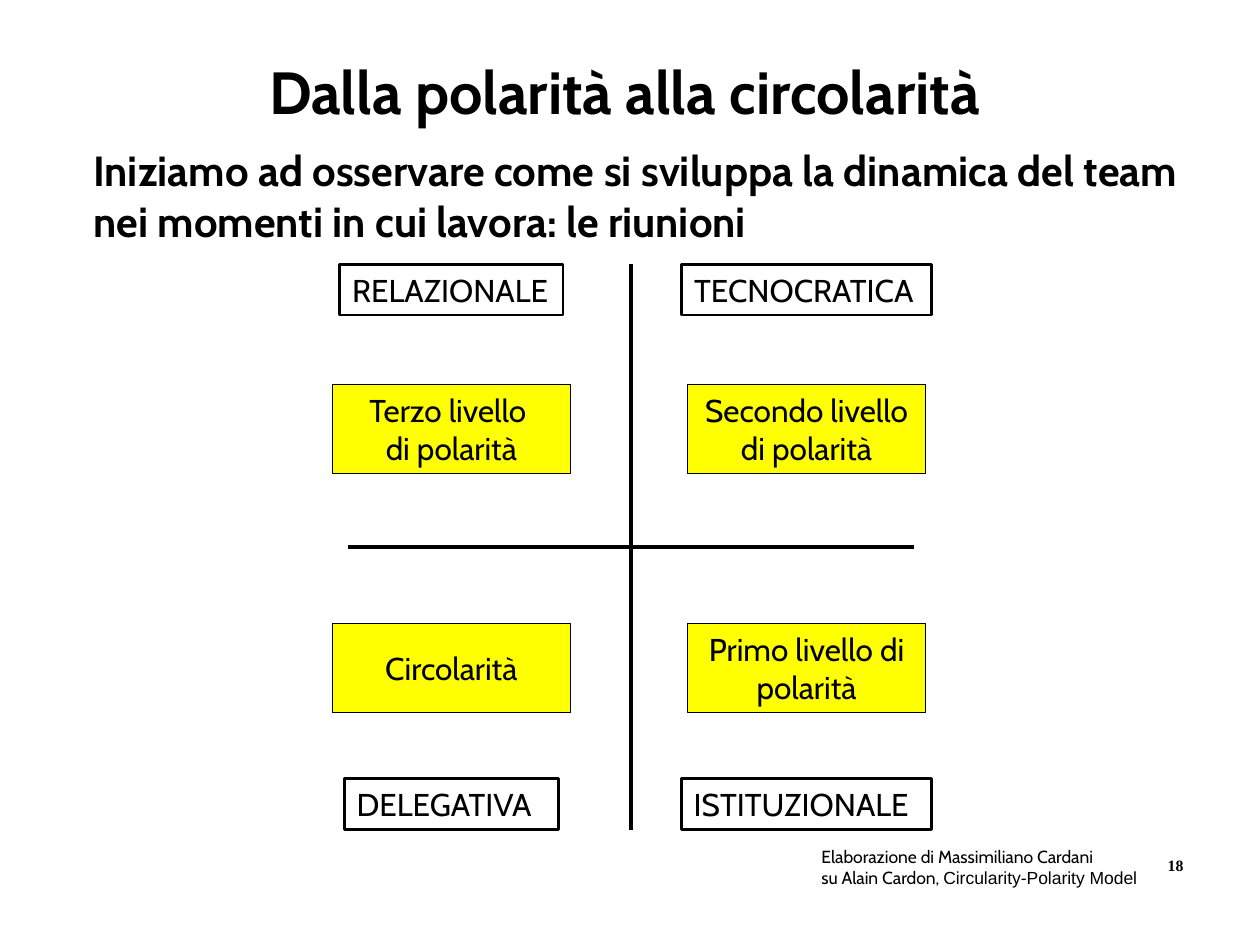
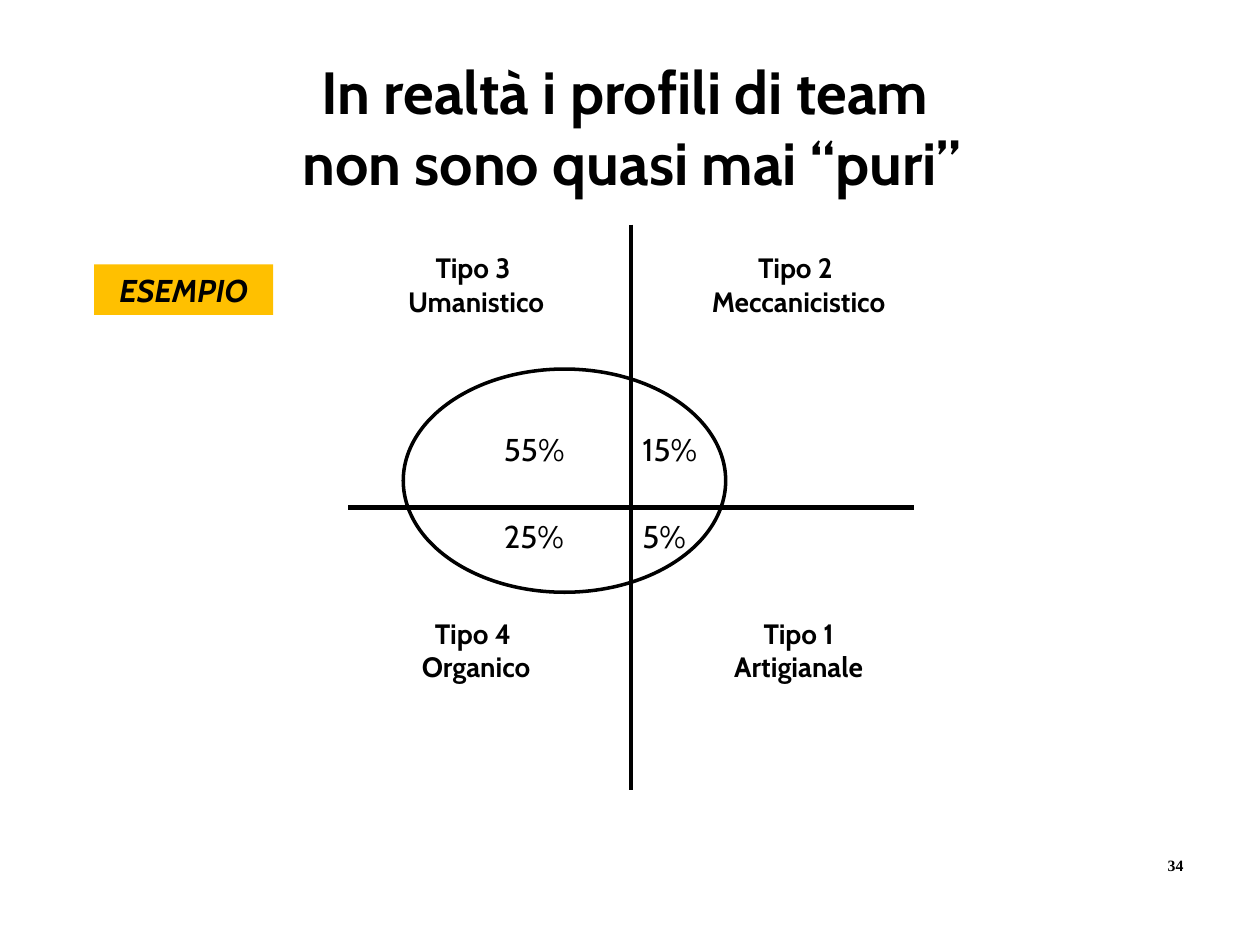
"""Build two slides on team polarity and circularity, each drawn on a pair of crossing axes."""
from lxml import etree
from pptx import Presentation
from pptx.dml.color import RGBColor
from pptx.enum.shapes import MSO_CONNECTOR, MSO_SHAPE
from pptx.enum.text import MSO_ANCHOR, MSO_AUTO_SIZE, PP_ALIGN
from pptx.oxml.ns import qn
from pptx.util import Cm, Pt

RECTANGLE, OVAL = MSO_SHAPE.RECTANGLE, MSO_SHAPE.OVAL
STRAIGHT = MSO_CONNECTOR.STRAIGHT
TOP, MIDDLE = MSO_ANCHOR.TOP, MSO_ANCHOR.MIDDLE
LEFT, CENTER = PP_ALIGN.LEFT, PP_ALIGN.CENTER
FIXED = MSO_AUTO_SIZE.NONE

COLORS = {name: RGBColor.from_string(code) for name, code in {
    "ink": "000000", "paper": "FFFFFF", "level": "FFFF00", "example": "FFC000"}.items()}
AXIS_X, AXIS_HALF = 12.72, 5.7


def write(holder, text, size=18, font="Cabin", bold=False, italic=False,
          align=LEFT, anchor=TOP, right_inset=0.25):
    frame = holder.text_frame
    frame.text = text
    frame.word_wrap = True
    frame.auto_size = FIXED
    frame.vertical_anchor = anchor
    frame.margin_left, frame.margin_right = Cm(0.25), Cm(right_inset)
    frame.margin_top = frame.margin_bottom = Cm(0.13)
    for paragraph in frame.paragraphs:
        paragraph.alignment = align
        paragraph.space_before = Pt(0)
        for run in paragraph.runs:
            run.font.name, run.font.size = font, Pt(size)
            run.font.bold, run.font.italic = bold, italic
            run.font.color.rgb = COLORS["ink"]


def add_panel(slide, place, fill=None, line=None, outline=RECTANGLE):
    panel = slide.shapes.add_shape(outline, *map(Cm, place))
    panel.shadow.inherit = False
    if fill:
        panel.fill.solid()
        panel.fill.fore_color.rgb = COLORS[fill]
    else:
        panel.fill.background()
    if line:
        panel.line.color.rgb = COLORS["ink"]
        panel.line.width = Pt(line)
    else:
        panel.line.fill.background()
    return panel


presentation = Presentation()
presentation.slide_width, presentation.slide_height = Cm(25.4), Cm(19.05)

slides = []
for layout, title, title_left, title_width, number, axis_y in [
        (1, "Dalla polarità alla circolarità", 0.36, 24.46, "18", 11.03),
        (5, "In realtà i profili di team \nnon sono quasi mai “puri”", 1.57, 22.33, "34", 10.23)]:
    slide = presentation.slides.add_slide(presentation.slide_layouts[layout])
    slides.append(slide)
    heading = slide.shapes.title
    heading.left, heading.top = Cm(title_left), Cm(0.97)
    heading.width, heading.height = Cm(title_width), Cm(1.57)
    write(heading, title, size=34, bold=True, align=CENTER)
    page_number = slide.shapes.add_textbox(Cm(23.29), Cm(17.12), Cm(0.94), Cm(0.64))
    write(page_number, number, size=9, font="Times New Roman", bold=True, right_inset=0)
    for dx, dy in [(0, AXIS_HALF), (AXIS_HALF, 0)]:
        axis = slide.shapes.add_connector(
            STRAIGHT, Cm(AXIS_X - dx), Cm(axis_y - dy), Cm(AXIS_X + dx), Cm(axis_y + dy))
        axis.line.color.rgb = COLORS["ink"]
        axis.line.width = Pt(2.5)
        etree.SubElement(axis.element.spPr, qn("a:effectLst"))

polarity, profiles = slides

intro = polarity.placeholders[1]
intro.left, intro.top, intro.width, intro.height = Cm(1.63), Cm(2.79), Cm(22.56), Cm(2.31)
write(intro, "Iniziamo ad osservare come si sviluppa la dinamica del team "
      "nei momenti in cui lavora: le riunioni", size=24, bold=True)
intro_format = intro.text_frame.paragraphs[0]._p.get_or_add_pPr()
intro_format.set("marL", "0")
intro_format.set("indent", "0")
etree.SubElement(intro_format, qn("a:buNone"))

for center, culture, culture_width, culture_top, level, level_top in [
        (9.1, "RELAZIONALE", 4.5, 5.33, "Terzo livello \ndi polarità", 7.75),
        (16.26, "TECNOCRATICA", 5.03, 5.33, "Secondo livello di polarità", 7.75),
        (9.1, "DELEGATIVA", 4.32, 15.7, "Circolarità", 12.57),
        (16.26, "ISTITUZIONALE", 5.05, 15.7, "Primo livello di polarità", 12.57)]:
    culture_place = center - culture_width / 2, culture_top, culture_width, 1.02
    write(add_panel(polarity, culture_place, "paper", 1.5), culture, right_inset=0)
    level_place = center - 2.4, level_top, 4.8, 1.8
    write(add_panel(polarity, level_place, "level", 0.75), level, align=CENTER, anchor=MIDDLE)

credit = polarity.shapes.add_textbox(Cm(16.31), Cm(16.92), Cm(7.8), Cm(1.12))
write(credit, "Elaborazione di Massimiliano Cardani\nsu Alain Cardon, ", size=10)
model = credit.text_frame.paragraphs[1].add_run()
model.text = "Circularity-Polarity Model"
model.font.name, model.font.size = "Arial", Pt(10)
model.font.color.rgb = COLORS["ink"]

add_panel(profiles, (8.13, 7.44, 6.5, 4.5), line=2, outline=OVAL)
for center, profile, profile_width, profile_top, share, share_left, share_top in [
        (9.6, "Tipo 3 \nUmanistico", 5.38, 4.93, "55%", 9.91, 8.53),
        (16.1, "Tipo 2 \nMeccanicistico", 6.4, 4.93, "15%", 12.7, 8.53),
        (9.6, "Tipo 4 \nOrganico", 5.38, 12.29, "25%", 9.91, 10.29),
        (16.1, "Tipo 1\nArtigianale", 5.38, 12.29, "5%", 12.7, 10.29)]:
    profile_label = profiles.shapes.add_textbox(
        Cm(center - profile_width / 2), Cm(profile_top), Cm(profile_width), Cm(1.63))
    write(profile_label, profile, size=16, bold=True, align=CENTER)
    share_label = profiles.shapes.add_textbox(Cm(share_left), Cm(share_top), Cm(2.01), Cm(1.02))
    write(share_label, share)

example = add_panel(profiles, (1.9, 5.33, 3.61, 1.02), "example")
write(example, "ESEMPIO", bold=True, italic=True, align=CENTER)

presentation.save("out.pptx")
